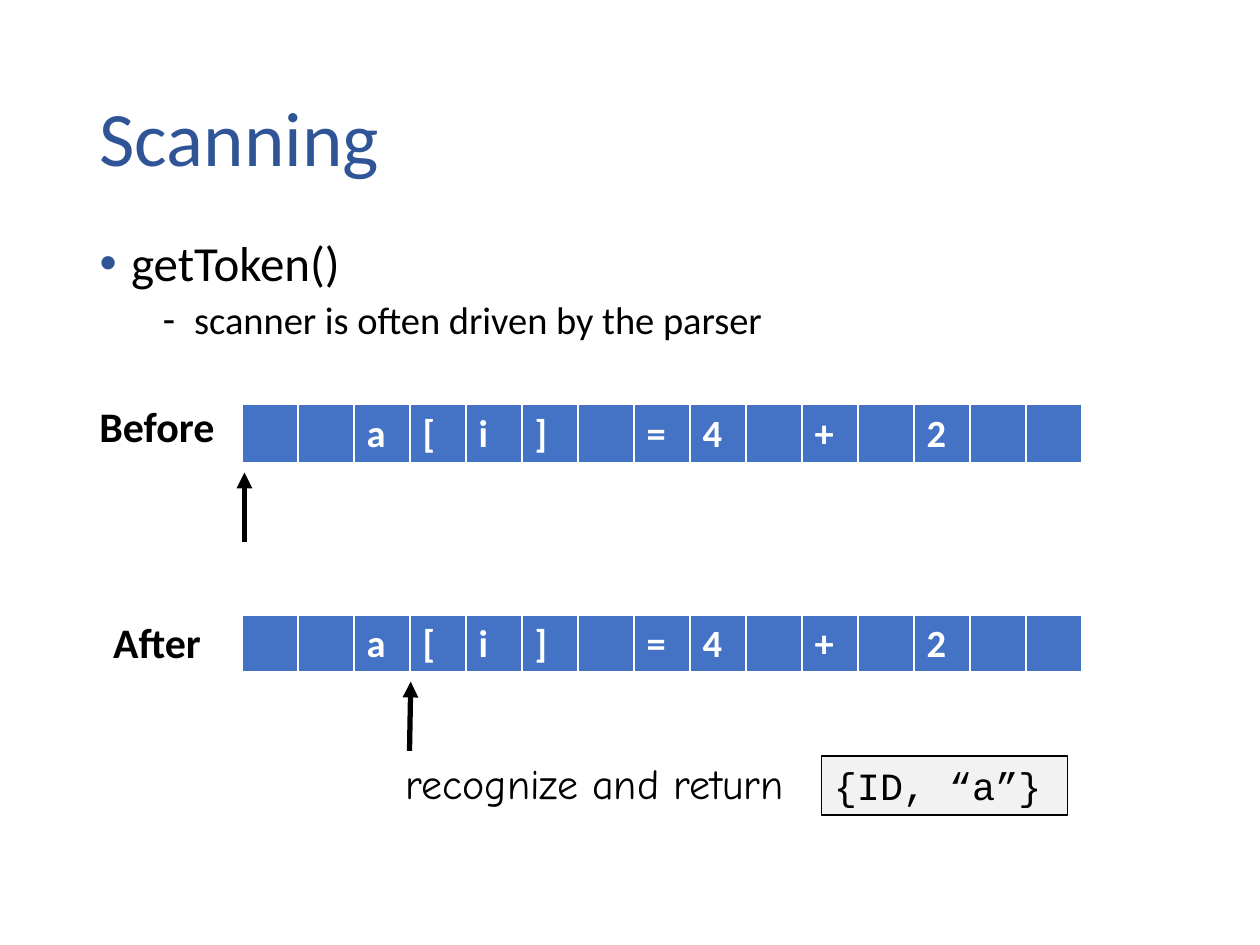
from lxml import etree
from pptx import Presentation
from pptx.dml.color import RGBColor
from pptx.enum.shapes import MSO_CONNECTOR, MSO_SHAPE
from pptx.enum.text import MSO_ANCHOR, MSO_AUTO_SIZE, PP_ALIGN
from pptx.oxml import parse_xml
from pptx.oxml.ns import nsdecls, qn
from pptx.util import Inches, Pt

STRAIGHT = MSO_CONNECTOR.STRAIGHT
RECTANGLE = MSO_SHAPE.RECTANGLE
MIDDLE, TOP = MSO_ANCHOR.MIDDLE, MSO_ANCHOR.TOP
NO_FIT = MSO_AUTO_SIZE.NONE
LEFT = PP_ALIGN.LEFT

BLACK, WHITE = "000000", "FFFFFF"
HEADING_BLUE, CELL_BLUE, LIGHT_GRAY = "2F5597", "4472C4", "F2F2F2"

# One character per input cell
INPUT_BUFFER = "  a[i] =4 + 2  "
BUFFER_LEFT, BUFFER_WIDTH, BUFFER_HEIGHT = 1.92, 6.67, 0.45


def color(hex_string):
    return RGBColor.from_string(hex_string)


def set_font(para, size, name="Calibri", hex_string=BLACK, bold=False):
    para.alignment = LEFT
    font = para.font
    font.size, font.name, font.bold = Pt(size), name, bold
    font.color.rgb = color(hex_string)


def place(shape, left, top, width, height):
    shape.left, shape.top = Inches(left), Inches(top)
    shape.width, shape.height = Inches(width), Inches(height)


def add_title(page, text):
    title = page.shapes.title
    place(title, 0.69, 0.4, 8.62, 1.45)
    frame = title.text_frame
    frame.text = text
    frame.auto_size = NO_FIT
    frame.vertical_anchor = MIDDLE
    para = frame.paragraphs[0]
    para.line_spacing = 0.9
    set_font(para, 44, hex_string=HEADING_BLUE)


def set_bullet(para, symbol, hex_string, indent):
    properties = para._p.get_or_add_pPr()
    properties.set("marL", str(Inches(indent)))
    properties.set("indent", str(Inches(-0.25)))
    bullet_color = etree.SubElement(properties, qn("a:buClr"))
    etree.SubElement(bullet_color, qn("a:srgbClr"), val=hex_string)
    etree.SubElement(properties, qn("a:buFont"), typeface="Arial")
    etree.SubElement(properties, qn("a:buChar"), char=symbol)


def add_list(page, items):
    body = page.placeholders[1]
    place(body, 0.69, 1.85, 6.34, 0.98)
    frame = body.text_frame
    frame.text = "\n".join(item[0] for item in items)
    frame.auto_size = NO_FIT
    frame.vertical_anchor = TOP
    for para, (_, level, size, before, symbol, bullet_hex) in zip(frame.paragraphs, items):
        para.level = level
        para.line_spacing = 0.9
        para.space_before = Pt(before)
        set_font(para, size)
        set_bullet(para, symbol, bullet_hex, 0.25 + 0.5 * level)


def add_label(page, text, left, top, width, name="Calibri", bold=False):
    box = page.shapes.add_textbox(Inches(left), Inches(top), Inches(width), Inches(0.5))
    box.text_frame.text = text
    box.text_frame.word_wrap = False
    set_font(box.text_frame.paragraphs[0], 24, name, bold=bold)


def set_borders(cell):
    properties = cell._tc.get_or_add_tcPr()
    sides = (("lnL", 1), ("lnR", 1), ("lnT", 1), ("lnB", 3))
    for index, (side, width) in enumerate(sides):
        properties.insert(index, parse_xml(
            f'<a:{side} {nsdecls("a")} w="{Pt(width)}"><a:solidFill>'
            f'<a:srgbClr val="{WHITE}"/></a:solidFill></a:{side}>'))


def add_buffer(page, top):
    count = len(INPUT_BUFFER)
    table = page.shapes.add_table(
        1, count, Inches(BUFFER_LEFT), Inches(top),
        Inches(BUFFER_WIDTH), Inches(BUFFER_HEIGHT)).table
    for column, character in enumerate(INPUT_BUFFER):
        table.columns[column].width = Inches(BUFFER_WIDTH / count)
        cell = table.cell(0, column)
        cell.text = character.strip()
        cell.fill.solid()
        cell.fill.fore_color.rgb = color(CELL_BLUE)
        set_font(cell.text_frame.paragraphs[0], 22, hex_string=WHITE, bold=True)
        set_borders(cell)


def add_pointer(page, start_x, end_x, tip_y):
    arrow = page.shapes.add_connector(
        STRAIGHT, Inches(start_x), Inches(tip_y + 0.55), Inches(end_x), Inches(tip_y))
    arrow.line.color.rgb = color(BLACK)
    arrow.line.width = Pt(3)
    etree.SubElement(arrow.line._get_or_add_ln(), qn("a:tailEnd"), type="triangle")
    etree.SubElement(arrow._element.spPr, qn("a:effectLst"))


def add_token(page, text):
    box = page.shapes.add_shape(
        RECTANGLE, Inches(6.52), Inches(6), Inches(1.95), Inches(0.47))
    box.shadow.inherit = False
    box.fill.solid()
    box.fill.fore_color.rgb = color(LIGHT_GRAY)
    box.line.color.rgb = color(BLACK)
    box.line.width = Pt(0.75)
    box.text_frame.text = text
    box.text_frame.word_wrap = True
    box.text_frame.vertical_anchor = TOP
    set_font(box.text_frame.paragraphs[0], 22, "Courier New")


def main():
    deck = Presentation()
    deck.slide_width, deck.slide_height = Inches(10), Inches(7.5)
    page = deck.slides.add_slide(deck.slide_layouts[1])

    # Heading and list
    add_title(page, "Scanning")
    add_list(page, [
        ("getToken()", 0, 28, 10, "•", HEADING_BLUE),
        ("scanner is often driven by the parser", 1, 22, 5, "-", BLACK),
    ])

    # Input before the call
    add_pointer(page, 1.94, 1.94, 3.75)
    add_buffer(page, 3.21)
    add_label(page, "Before", 0.69, 3.13, 1.13, bold=True)

    # Input after the call
    add_pointer(page, 3.25, 3.26, 5.41)
    add_buffer(page, 4.88)
    add_label(page, "After", 0.8, 4.84, 0.91, bold=True)

    # Returned token
    add_label(page, "recognize and return", 3.12, 5.96, 3.53, "Comic Neue")
    add_token(page, "{ID, “a”}")

    deck.save("out.pptx")


if __name__ == "__main__":
    main()
